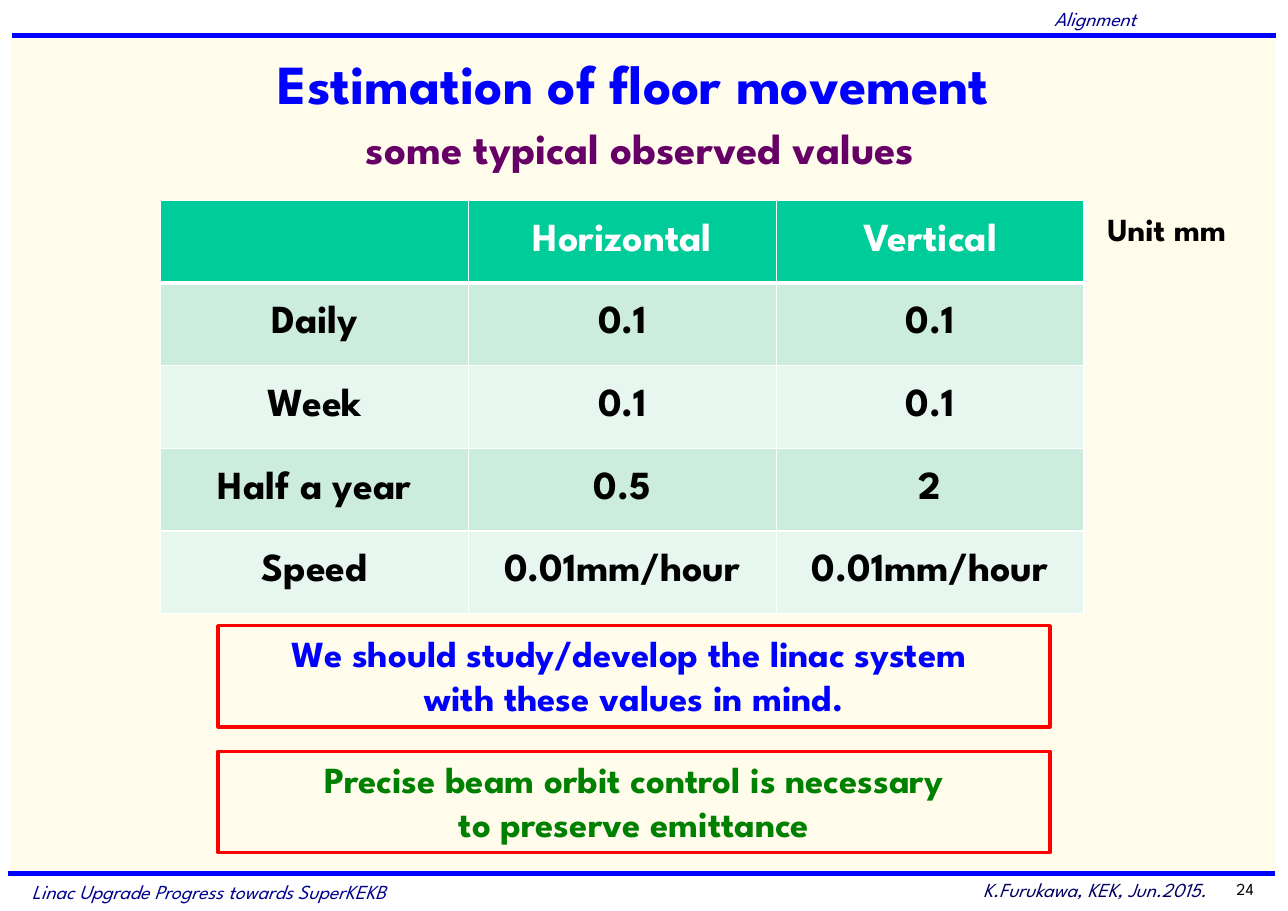
import pptx
import pptx.util
import pptx.dml.color
import pptx.enum.shapes
import pptx.enum.text
import pptx.oxml
import pptx.oxml.ns
from pptx.util import Inches

FONT = "League Spartan"
ALIGN = pptx.enum.text.PP_ALIGN
MIDDLE = pptx.enum.text.MSO_ANCHOR.MIDDLE
RECTANGLE = pptx.enum.shapes.MSO_SHAPE.RECTANGLE
FLOOR_VALUES = [
    ["", "Horizontal", "Vertical"],
    ["Daily", "0.1", "0.1"],
    ["Week", "0.1", "0.1"],
    ["Half a year", "0.5", "2"],
    ["Speed", "0.01mm/hour", "0.01mm/hour"],
]


def colour(value):
    return pptx.dml.color.RGBColor.from_string(value)


def set_font(font, size, value, bold=False, italic=False):
    font.name = FONT
    font.size = pptx.util.Pt(size)
    font.bold = bold
    font.italic = italic
    font.color.rgb = colour(value)


def write(frame, text, size, value, align, bold=False, italic=False):
    frame.text = text
    for para in frame.paragraphs:
        para.alignment = align
        set_font(para.font, size, value, bold, italic)


def set_margins(target, side, end):
    target.margin_left = target.margin_right = Inches(side)
    target.margin_top = target.margin_bottom = Inches(end)


def add_label(page, place, text, size, value, align, bold=False, italic=False, wrap=True):
    box = page.shapes.add_textbox(*map(Inches, place))
    box.text_frame.word_wrap = wrap
    set_margins(box.text_frame, 0.11, 0.05)
    write(box.text_frame, text, size, value, align, bold, italic)


def add_rule(page, left, right, height):
    rule = page.shapes.add_connector(
        pptx.enum.shapes.MSO_CONNECTOR.STRAIGHT,
        Inches(left), Inches(height), Inches(right), Inches(height))
    rule.line.color.rgb = colour("0000FF")
    rule.line.width = pptx.util.Pt(3)
    properties = rule._element.spPr
    properties.append(properties.makeelement(pptx.oxml.ns.qn("a:effectLst"), {}))


def add_backdrop(page):
    backdrop = page.shapes.add_shape(
        RECTANGLE, Inches(0.1), Inches(0.32), Inches(11.48), Inches(7.62))
    backdrop.shadow.inherit = False
    backdrop.fill.solid()
    backdrop.fill.fore_color.rgb = colour("FFFCEB")
    backdrop.line.fill.background()
    page.shapes.title._element.addprevious(backdrop._element)


def add_message(page, top, text, value):
    box = page.shapes.add_shape(
        RECTANGLE, Inches(1.98), Inches(top), Inches(7.55), Inches(0.92))
    box.shadow.inherit = False
    box.fill.background()
    box.line.color.rgb = colour("FF0000")
    box.line.width = pptx.util.Pt(2.25)
    frame = box.text_frame
    frame.word_wrap = True
    frame.vertical_anchor = pptx.enum.text.MSO_ANCHOR.TOP
    set_margins(frame, 0.11, 0.05)
    write(frame, text, 24, value, ALIGN.CENTER, bold=True)


def add_title_run(para, text, size, value):
    span = para.add_run()
    span.text = text
    set_font(span.font, size, value, bold=True)


def fill_title(page):
    title = page.shapes.title
    title.left, title.top = Inches(0.32), Inches(0.33)
    title.width, title.height = Inches(10.86), Inches(1.38)
    frame = title.text_frame
    frame.auto_size = pptx.enum.text.MSO_AUTO_SIZE.NONE
    frame.vertical_anchor = MIDDLE
    set_margins(frame, 0.11, 0.05)
    para = frame.paragraphs[0]
    para.alignment = ALIGN.CENTER
    add_title_run(para, "Estimation of floor movement", 36, "0000FF")
    para.add_line_break()
    add_title_run(para, " ", 32, "0000FF")
    add_title_run(para, "some typical observed values", 28, "660066")


def add_border(cell, side, points):
    namespace = pptx.oxml.ns.nsdecls("a")
    cell._tc.get_or_add_tcPr().append(pptx.oxml.parse_xml(
        f'<a:{side} {namespace} w="{pptx.util.Pt(points)}"><a:solidFill>'
        f'<a:srgbClr val="FFFFFF"/></a:solidFill></a:{side}>'))


def format_cell(cell, text, row):
    header = row == 0
    add_border(cell, "lnL", 1)
    add_border(cell, "lnR", 1)
    add_border(cell, "lnT", 3 if row == 1 else 1)
    add_border(cell, "lnB", 3 if header else 1)
    band = "CCECDE" if row % 2 else "E7F6EF"
    cell.fill.solid()
    cell.fill.fore_color.rgb = colour("00CC99" if header else band)
    cell.vertical_anchor = MIDDLE
    set_margins(cell, 0.12, 0.06)
    write(cell.text_frame, text, 26, "FFFFFF" if header else "000000",
          ALIGN.CENTER, bold=True)


def add_floor_table(page):
    table = page.shapes.add_table(
        len(FLOOR_VALUES), len(FLOOR_VALUES[0]),
        Inches(1.46), Inches(1.82), Inches(8.38), Inches(3.75)).table
    for row, values in enumerate(FLOOR_VALUES):
        for column, text in enumerate(values):
            format_cell(table.cell(row, column), text, row)


def main():
    deck = pptx.Presentation()
    deck.slide_width, deck.slide_height = Inches(11.69), Inches(8.27)
    page = deck.slides.add_slide(deck.slide_layouts[5])
    fill_title(page)
    add_backdrop(page)
    add_rule(page, 0.11, 11.58, 0.32)
    add_rule(page, 0.07, 11.57, 7.93)
    add_label(page, (7.85, 7.92, 3.21, 0.33), "K.Furukawa, KEK, Jun.2015.",
              13, "000060", ALIGN.RIGHT, italic=True)
    add_label(page, (0.18, 7.94, 4.65, 0.33), "Linac Upgrade Progress towards SuperKEKB",
              13, "000090", ALIGN.LEFT, italic=True)
    add_label(page, (6.02, 0.01, 4.4, 0.28), "Alignment",
              13, "000090", ALIGN.RIGHT, italic=True)
    add_label(page, (10.81, 7.93, 0.68, 0.28), "24", 11, "000000", ALIGN.RIGHT)
    add_floor_table(page)
    add_label(page, (9.94, 1.85, 1.41, 0.47), "Unit mm",
              21, "000000", ALIGN.LEFT, bold=True, wrap=False)
    add_message(page, 5.68, "We should study/develop the linac system \n"
                "with these values in mind.", "0000FF")
    add_message(page, 6.82, "Precise beam orbit control is necessary\v"
                "to preserve emittance", "008000")
    deck.save("out.pptx")


if __name__ == "__main__":
    main()
